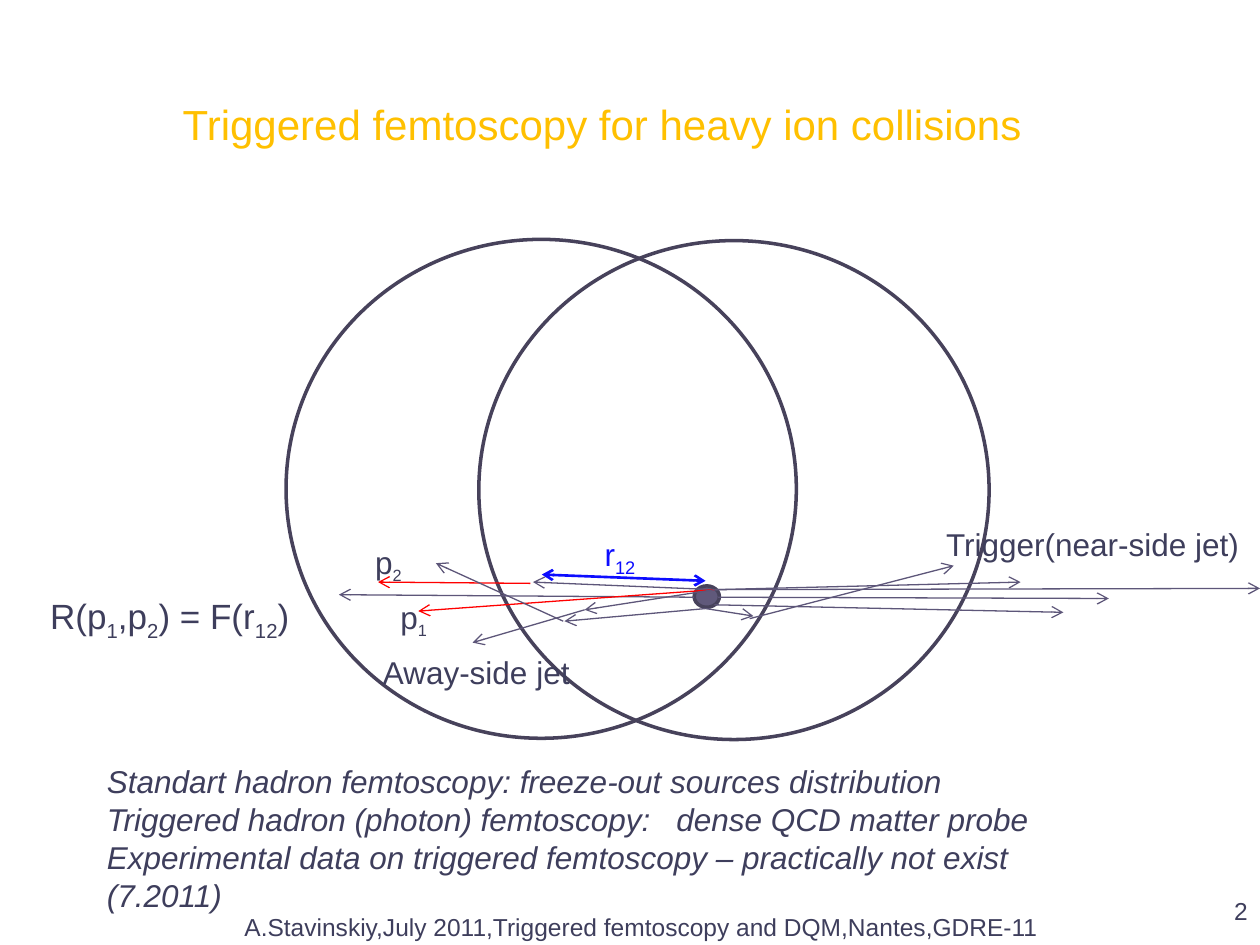
from lxml import etree
from pptx import Presentation
from pptx import util as u
from pptx.dml.color import RGBColor
from pptx.enum import shapes, text
from pptx.oxml import ns

FONT = "Arial"
INK = RGBColor(0x3E, 0x3E, 0x5C)
OUTLINE = RGBColor(0x47, 0x42, 0x5B)
SOURCE = RGBColor(0x60, 0x59, 0x7B)
TRACK = RGBColor(0x5D, 0x56, 0x79)
RED = RGBColor(0xFF, 0x00, 0x00)
BLUE = RGBColor(0x0D, 0x0D, 0xFF)
GOLD = RGBColor(0xFF, 0xC0, 0x00)
WHITE = RGBColor(0xFF, 0xFF, 0xFF)


def place(shape, box):
    shape.left, shape.top, shape.width, shape.height = (u.Inches(n) for n in box)


def within(box, left, top, width, height):
    return box[0] + left, box[1] + top, width, height


def write(frame, lines, size=18, color=INK, italic=False, wrap=False,
          align=text.PP_ALIGN.LEFT, subscript_size=None, tab=None):
    frame.word_wrap = wrap
    frame.vertical_anchor = text.MSO_ANCHOR.TOP
    for index, line in enumerate(lines):
        paragraph = frame.paragraphs[0] if index == 0 else frame.add_paragraph()
        paragraph.alignment = align
        if tab and "\t" in line:
            properties = paragraph._p.get_or_add_pPr()
            stops = etree.SubElement(properties, ns.qn("a:tabLst"))
            etree.SubElement(stops, ns.qn("a:tab"), pos=str(u.Inches(tab)), algn="l")
        for position, part in enumerate(line.split("|")):
            if not part:
                continue
            run = paragraph.add_run()
            run.text = part
            font = run.font
            font.name, font.size, font.italic = FONT, u.Pt(size), italic
            font.color.rgb = color
            if position % 2:
                font.size = u.Pt(subscript_size or size)
                font._element.set("baseline", "-25000")


def add_text(slide, box, *lines, **style):
    shape = slide.shapes.add_textbox(0, 0, 0, 0)
    place(shape, box)
    write(shape.text_frame, lines, **style)


def add_circle(slide, box, fill=None):
    shape = slide.shapes.add_shape(shapes.MSO_SHAPE.OVAL, 0, 0, 0, 0)
    place(shape, box)
    shape.shadow.inherit = False
    if fill is None:
        shape.fill.background()
    else:
        shape.fill.solid()
        shape.fill.fore_color.rgb = fill
    shape.line.color.rgb = OUTLINE
    shape.line.width = u.Pt(2)


def add_arrow(slide, box, start, end, color=TRACK, width=0.75, both=False):
    ends = [u.Inches(origin + offset)
            for point in (start, end) for origin, offset in zip(box, point)]
    arrow = slide.shapes.add_connector(shapes.MSO_CONNECTOR.STRAIGHT, *ends)
    arrow.line.color.rgb = color
    arrow.line.width = u.Pt(width)
    line = arrow.line._get_or_add_ln()
    for tag in ("a:headEnd", "a:tailEnd") if both else ("a:tailEnd",):
        etree.SubElement(line, ns.qn(tag), type="arrow")
    etree.SubElement(arrow._element.spPr, ns.qn("a:effectLst"))


def add_title(slide, box):
    title = slide.shapes.title
    place(title, box)
    write(title.text_frame, ["Triggered femtoscopy for heavy ion collisions"],
          size=24, color=GOLD, wrap=True)


def add_collision(slide, box):
    add_circle(slide, within(box, 0.27, 0.4, 4.05, 3.96), WHITE)
    add_circle(slide, within(box, 1.8, 0.41, 4.05, 3.96))
    add_circle(slide, within(box, 3.51, 3.15, 0.2, 0.17), SOURCE)

    upper, lower = (3.67, 3.18), (3.6, 3.33)
    tracks = [
        ((3.7, 3.24), (6.8, 3.25), TRACK),
        (upper, (6.1, 3.12), TRACK),
        ((3.67, 3.3), (6.44, 3.36), TRACK),
        ((3.54, 3.18), (8, 3.17), TRACK),
        ((3.51, 3.24), (0.69, 3.22), TRACK),
        (upper, (2.23, 3.12), TRACK),
        ((2.21, 3.13), (1, 3.12), RED),
        (upper, (1.32, 3.35), RED),
        (lower, (2.48, 3.43), TRACK),
        ((2.47, 3.43), (1.46, 2.97), TRACK),
        (upper, (2.64, 3.34), TRACK),
        ((2.64, 3.34), (1.75, 3.6), TRACK),
        (lower, (3.98, 3.39), TRACK),
        ((3.95, 3.41), (5.57, 2.99), TRACK),
    ]
    for start, end, color in tracks:
        add_arrow(slide, box, start, end, color)
    add_arrow(slide, box, (2.3, 3.06), (3.6, 3.11), BLUE, width=1.5, both=True)

    add_text(slide, within(box, 5.41, 2.62, 2.59, 0.4), "Trigger(near-side jet)")
    add_text(slide, within(box, 0.94, 3.63, 1.72, 0.4), "Away-side jet")
    add_text(slide, within(box, 0.88, 2.76, 0.46, 0.4), "p|2|", subscript_size=16)
    add_text(slide, within(box, 1.08, 3.2, 0.46, 0.4), "p|1|", subscript_size=16)
    add_text(slide, within(box, 2.7, 2.7, 0.51, 0.4), "r|12|", color=BLUE)


def add_conclusions(slide, box):
    add_text(slide, box,
             "Standart hadron femtoscopy: freeze-out sources distribution",
             "Triggered hadron (photon) femtoscopy:\tdense QCD matter probe",
             "Experimental data on triggered femtoscopy – practically not exist (7.2011)",
             italic=True, wrap=True, tab=4.52)


def add_footer(slide, box):
    left, top, width, height = box
    add_text(slide, (left, top + 0.13, 7.3, height - 0.13),
             "A.Stavinskiy,July 2011,Triggered femtoscopy and DQM,Nantes,GDRE-11",
             size=14, wrap=True, align=text.PP_ALIGN.CENTER)
    add_text(slide, (left + width - 0.75, top, 0.75, height), "2",
             size=14, wrap=True, align=text.PP_ALIGN.RIGHT)


def main():
    presentation = Presentation()
    presentation.slide_width = u.Inches(10)
    presentation.slide_height = u.Inches(7.5)
    slide = presentation.slides.add_slide(presentation.slide_layouts[5])
    add_title(slide, (1.35, 0.73, 7.64, 0.5))
    add_collision(slide, (2, 1.5, 8, 4.4))
    add_text(slide, (0.3, 4.67, 2.26, 0.44), "R(p|1|,p|2|) = F(r|12|)", size=20)
    add_conclusions(slide, (0.75, 6, 8.2, 1.31))
    add_footer(slide, (1.44, 7.06, 8.56, 0.44))
    presentation.save("out.pptx")


if __name__ == "__main__":
    main()
